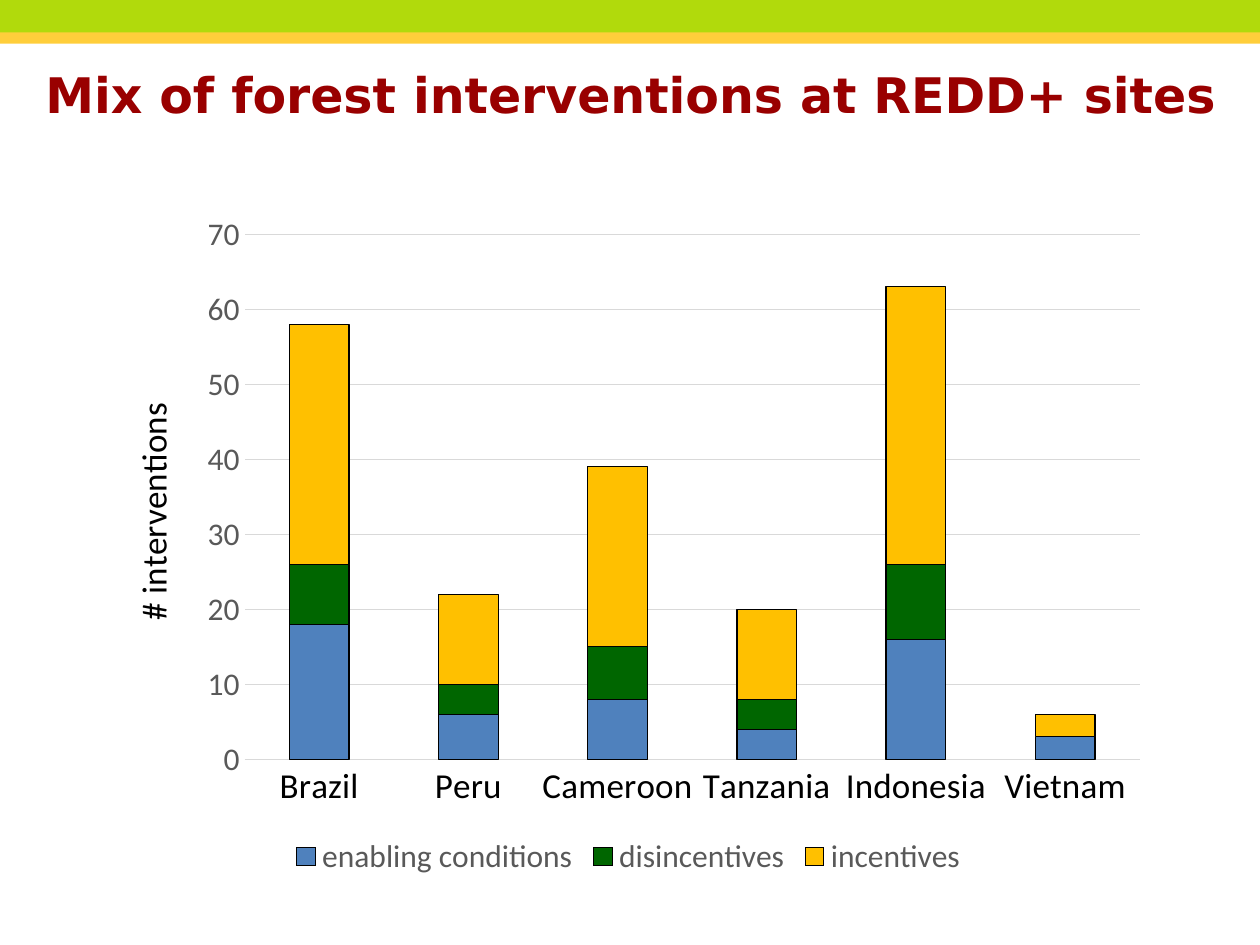
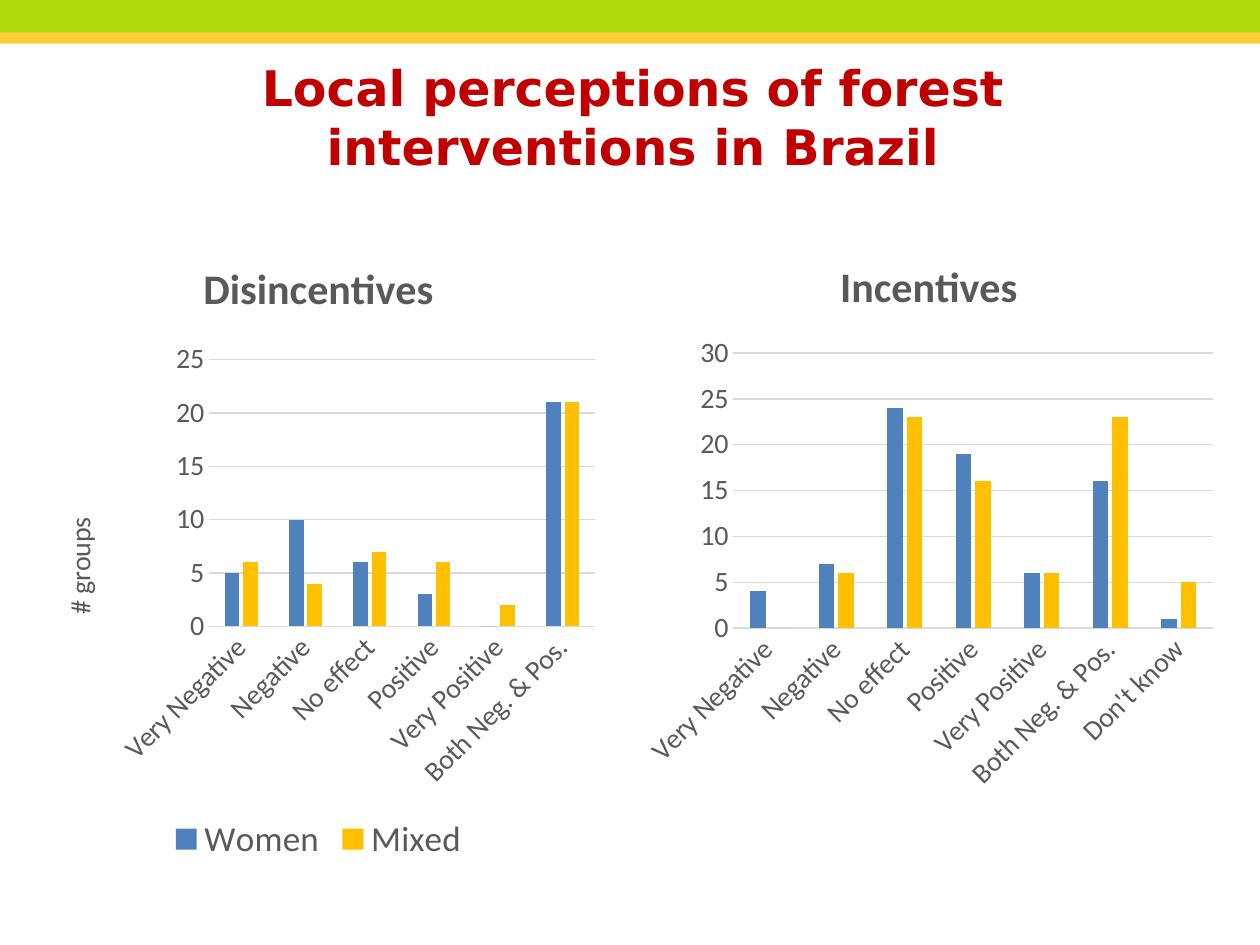
from lxml import etree
from pptx import Presentation
from pptx.chart.data import CategoryChartData
from pptx.dml.color import RGBColor
from pptx.enum.chart import XL_CHART_TYPE, XL_LEGEND_POSITION, XL_TICK_MARK
from pptx.enum.shapes import MSO_SHAPE
from pptx.enum.text import MSO_ANCHOR, PP_ALIGN
from pptx.oxml.ns import qn
from pptx.util import Pt

STACKED = XL_CHART_TYPE.COLUMN_STACKED
CLUSTERED = XL_CHART_TYPE.COLUMN_CLUSTERED
BOTTOM = XL_LEGEND_POSITION.BOTTOM
NO_TICK = XL_TICK_MARK.NONE
RECT = MSO_SHAPE.RECTANGLE
TOP, MIDDLE = MSO_ANCHOR.TOP, MSO_ANCHOR.MIDDLE
CENTER = PP_ALIGN.CENTER

LIME = RGBColor(0xB1, 0xDA, 0x0C)
YELLOW = RGBColor(0xFF, 0xCE, 0x3B)
MAROON = RGBColor(0x99, 0x00, 0x00)
RED = RGBColor(0xC0, 0x00, 0x00)
BLUE = RGBColor(0x4F, 0x81, 0xBD)
GREEN = RGBColor(0x00, 0x66, 0x00)
AMBER = RGBColor(0xFF, 0xC0, 0x00)
BLACK = RGBColor(0x00, 0x00, 0x00)
GREY = RGBColor(0x59, 0x59, 0x59)
GRID = RGBColor(0xD9, 0xD9, 0xD9)


def style_font(font, size, color, name="Calibri", bold=False):
    font.size = Pt(size)
    font.name = name
    font.bold = bold
    font.color.rgb = color


def add_column_chart(s, kind, box, plot_box, cats, series, top, step, cat_size, val_size,
                     label_color, gap, overlap, title=None, axis_title=None,
                     legend_size=None, outline=False, slanted=False):
    data = CategoryChartData()
    data.categories = cats
    for name, color, values in series:
        data.add_series(name, values)
    chart = s.shapes.add_chart(kind, *[Pt(v) for v in box], data).chart
    style_font(chart.font, 10, BLACK)

    chart.has_title = title is not None
    if title:
        tf = chart.chart_title.text_frame
        tf.text = title
        style_font(tf.paragraphs[0].runs[0].font, 24, GREY, bold=True)
        chart.chart_title.include_in_layout = False

    chart.has_legend = legend_size is not None
    if legend_size:
        chart.legend.position = BOTTOM
        chart.legend.include_in_layout = False
        style_font(chart.legend.font, legend_size, GREY)

    plot = chart.plots[0]
    plot.gap_width = gap
    plot.overlap = overlap
    plot.vary_by_categories = False
    for ser, (name, color, values) in zip(plot.series, series):
        ser.format.fill.solid()
        ser.format.fill.fore_color.rgb = color
        if outline:
            ser.format.line.color.rgb = BLACK
            ser.format.line.width = Pt(0.75)

    cat_axis, val_axis = chart.category_axis, chart.value_axis
    for axis, size, color in ((cat_axis, cat_size, label_color), (val_axis, val_size, GREY)):
        axis.major_tick_mark = NO_TICK
        axis.minor_tick_mark = NO_TICK
        style_font(axis.tick_labels.font, size, color)
    val_axis.minimum_scale = 0
    val_axis.maximum_scale = top
    val_axis.major_unit = step
    val_axis.format.line.fill.background()
    for line in (cat_axis.format.line, val_axis.major_gridlines.format.line):
        line.color.rgb = GRID
        line.width = Pt(0.75)
    if axis_title:
        tf = val_axis.axis_title.text_frame
        tf.text = axis_title
        style_font(tf.paragraphs[0].runs[0].font, cat_size, label_color)
    if slanted:
        chart.element.xpath("//c:catAx/c:txPr/a:bodyPr")[0].set("rot", "-2700000")

    area = chart.element.xpath("//c:plotArea")[0]
    for old in area.findall(qn("c:layout")):
        area.remove(old)
    layout = etree.Element(qn("c:layout"))
    manual = etree.SubElement(layout, qn("c:manualLayout"))
    settings = [("layoutTarget", "inner"), ("xMode", "edge"), ("yMode", "edge")]
    for tag, value in settings + list(zip("xywh", plot_box)):
        etree.SubElement(manual, qn("c:" + tag)).set("val", str(value))
    area.insert(0, layout)


prs = Presentation()
prs.slide_width, prs.slide_height = Pt(720), Pt(540)
title_only = prs.slide_layouts[5]

titles = [
    ("Mix of forest interventions at REDD+ sites", MAROON, TOP, (18, 33, 684.5, 54)),
    ("Local perceptions of forest interventions in Brazil", RED, MIDDLE, (35.5, 39.5, 652, 54)),
]
for text, color, anchor, box in titles:
    s = prs.slides.add_slide(title_only)
    sp = s.shapes.title
    sp.left, sp.top, sp.width, sp.height = [Pt(v) for v in box]
    tf = sp.text_frame
    tf.text = text
    tf.word_wrap = True
    tf.vertical_anchor = anchor
    p = tf.paragraphs[0]
    p.alignment = CENTER
    style_font(p.runs[0].font, 28, color, "DejaVu Sans", True)
mix, perceptions = prs.slides

bands = [(0, 19.5, LIME), (18.5, 6.5, YELLOW)]
for number, (top, height, color) in enumerate(bands, 20):
    band = mix.shapes.add_shape(RECT, 0, Pt(top), prs.slide_width, Pt(height))
    band.shadow.inherit = False
    band.fill.solid()
    band.fill.fore_color.rgb = color
    band.line.fill.background()
    band.element.nvSpPr.cNvPr.set("id", str(number))
    prs.slide_master.shapes.element.append(band.element)

countries = ["Brazil", "Peru", "Cameroon", "Tanzania", "Indonesia", "Vietnam"]
add_column_chart(
    mix, STACKED, (54.5, 114.5, 609, 389.5), (0.14, 0.05, 0.84, 0.77), countries,
    [("enabling conditions", BLUE, (18, 6, 8, 4, 16, 3)),
     ("disincentives", GREEN, (8, 4, 7, 4, 10, 0)),
     ("incentives", AMBER, (32, 12, 24, 12, 37, 3))],
    top=70, step=10, cat_size=20, val_size=18, label_color=BLACK, gap=150, overlap=100,
    axis_title="# interventions", legend_size=18, outline=True)

effects = ["Very Negative", "Negative", "No effect", "Positive", "Very Positive",
           "Both Neg. & Pos."]
perception_style = dict(step=5, cat_size=16, val_size=16, label_color=GREY, gap=219,
                        overlap=-27, slanted=True)
add_column_chart(
    perceptions, CLUSTERED, (17.5, 133, 329, 363), (0.31, 0.2, 0.67, 0.42), effects,
    [("Women", BLUE, (5, 10, 6, 3, 0, 21)), ("Mixed", AMBER, (6, 4, 7, 6, 2, 21))],
    top=25, title="Disincentives", axis_title="# groups", legend_size=20, **perception_style)
add_column_chart(
    perceptions, CLUSTERED, (361.5, 133, 338.5, 327.5), (0.17, 0.21, 0.81, 0.48),
    effects + ["Don't know"],
    [("Series 1", BLUE, (4, 7, 24, 19, 6, 16, 1)),
     ("Series 2", AMBER, (0, 6, 23, 16, 6, 23, 5))],
    top=30, title="Incentives", **perception_style)

prs.save("out.pptx")
